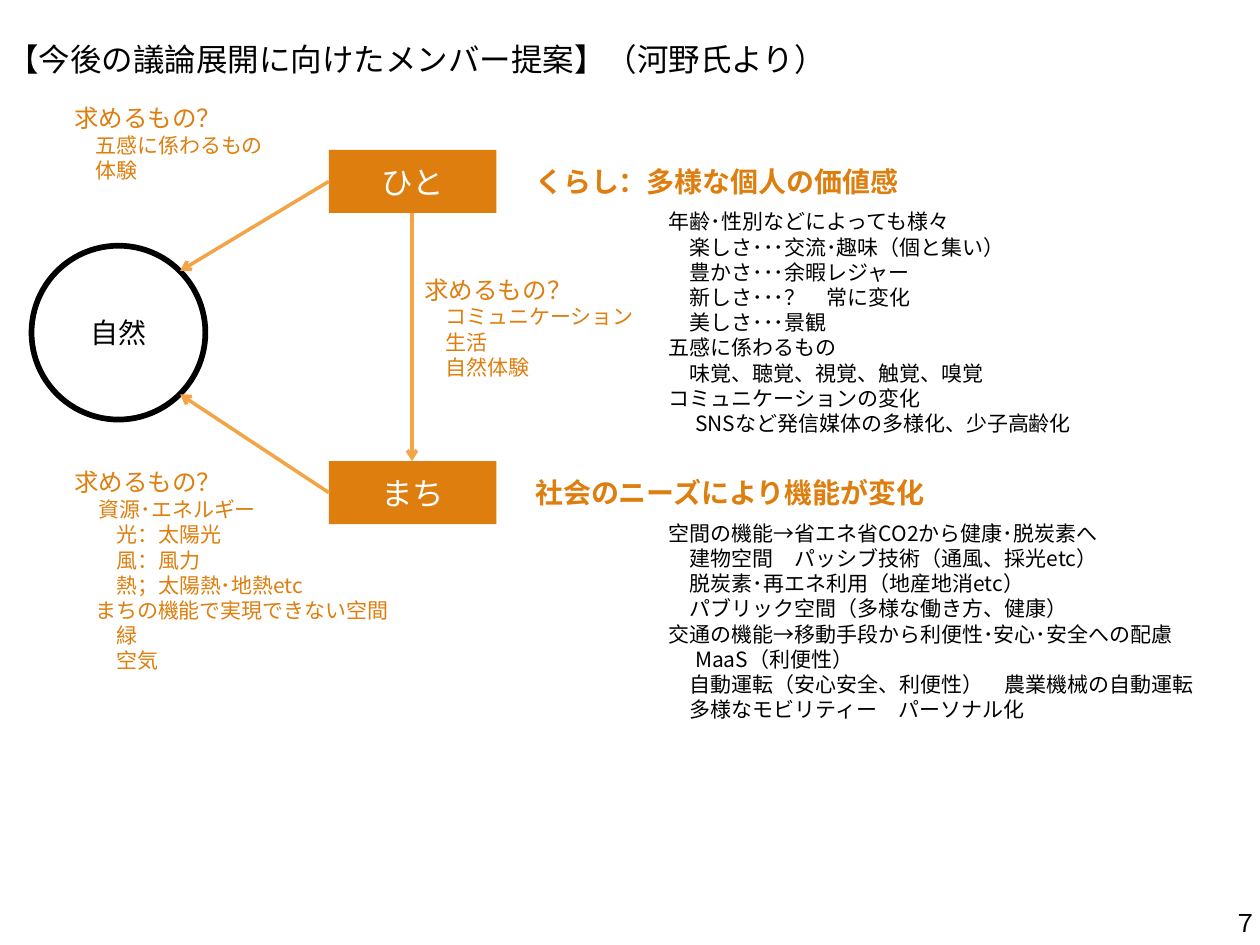
"""Build a slide on what people and towns seek from nature, on a grid of 100 columns by 75 rows."""
from lxml.etree import SubElement
from pptx import Presentation
from pptx.dml.color import RGBColor
from pptx.enum.shapes import MSO_CONNECTOR, MSO_SHAPE
from pptx.enum.text import MSO_ANCHOR, MSO_AUTO_SIZE, PP_ALIGN
from pptx.oxml.ns import qn
from pptx.util import Inches, Pt

THEME = {
    "font": "Noto Sans CJK JP",
    "black": RGBColor.from_string("000000"),
    "white": RGBColor.from_string("FFFFFF"),
    "orange": RGBColor.from_string("DD7E0E"),
    "arrow": RGBColor.from_string("F3A447"),
    "title": 18, "heading": 16, "question": 14, "body": 12,
}

presentation = Presentation()
presentation.slide_width, presentation.slide_height = Inches(10), Inches(7.5)
slide = presentation.slides.add_slide(presentation.slide_layouts[6])
COLUMN = presentation.slide_width / 100
ROW = presentation.slide_height / 75


def place(column, row, columns, rows):
    return [round(n) for n in (column * COLUMN, row * ROW, columns * COLUMN, rows * ROW)]


def write(shape, lines, color, align=PP_ALIGN.LEFT, anchor=MSO_ANCHOR.TOP, bold=False, wrap=True):
    frame = shape.text_frame
    frame.word_wrap, frame.vertical_anchor = wrap, anchor
    for index, (level, size, text) in enumerate(lines):
        paragraph = frame.add_paragraph() if index else frame.paragraphs[0]
        paragraph.text, paragraph.alignment = text, align
        font = paragraph.font
        font.size, font.bold, font.name = Pt(THEME[size]), bold, THEME["font"]
        font.color.rgb = THEME[color]
        properties = paragraph._p.get_or_add_pPr()
        properties.set("marL", str(Pt(level * THEME["body"])))
        properties.set("indent", "0")
        SubElement(properties.find(qn("a:defRPr")), qn("a:ea"), typeface=THEME["font"])


title = slide.shapes.add_textbox(*place(-0.4, 2.7, 67.7, 4))
write(title, [(0, "title", "【今後の議論展開に向けたメンバー提案】（河野氏より）")], "black", wrap=False)
title.text_frame.auto_size = MSO_AUTO_SIZE.SHAPE_TO_FIT_TEXT

nature = slide.shapes.add_shape(MSO_SHAPE.OVAL, *place(2.5, 19.5, 13.8, 13.8))
nature.shadow.inherit = False
nature.fill.background()
nature.line.color.rgb, nature.line.width = THEME["black"], Pt(3.25)
write(nature, [(0, "heading", "自然")], "black", PP_ALIGN.CENTER, MSO_ANCHOR.MIDDLE, wrap=False)

topics = [
    (11.9, "ひと", "くらし：多様な個人の価値感", [
        (0, "年齢･性別などによっても様々"),
        (1, "楽しさ･･･交流･趣味（個と集い）"),
        (1, "豊かさ･･･余暇レジャー"),
        (1, "新しさ･･･？　常に変化"),
        (1, "美しさ･･･景観"),
        (0, "五感に係わるもの"),
        (1, "味覚、聴覚、視覚、触覚、嗅覚"),
        (0, "コミュニケーションの変化"),
        (1.25, "SNSなど発信媒体の多様化、少子高齢化"),
    ]),
    (36.6, "まち", "社会のニーズにより機能が変化", [
        (0, "空間の機能→省エネ省CO2から健康･脱炭素へ"),
        (1, "建物空間　パッシブ技術（通風、採光etc）"),
        (1, "脱炭素･再エネ利用（地産地消etc）"),
        (1, "パブリック空間（多様な働き方、健康）"),
        (0, "交通の機能→移動手段から利便性･安心･安全への配慮"),
        (1.25, "MaaS（利便性）"),
        (1, "自動運転（安心安全、利便性）　農業機械の自動運転"),
        (1, "多様なモビリティー　パーソナル化"),
    ]),
]
for row, name, heading, details in topics:
    box = slide.shapes.add_shape(MSO_SHAPE.RECTANGLE, *place(26.1, row, 13.3, 5))
    box.shadow.inherit = False
    box.fill.solid()
    box.fill.fore_color.rgb = THEME["orange"]
    box.line.fill.background()
    write(box, [(0, "title", name)], "white", PP_ALIGN.CENTER, MSO_ANCHOR.MIDDLE)
    heading_box = slide.shapes.add_textbox(*place(41.5, row, 46.1, 5))
    write(heading_box, [(0, "heading", heading)], "orange", anchor=MSO_ANCHOR.MIDDLE, bold=True)
    detail_box = slide.shapes.add_textbox(*place(52.1, row + 4.2, 43.9, 2 * len(details) + 1))
    write(detail_box, [(level, "body", text) for level, text in details], "black")

questions = [
    ((4.9, 7.7, 22.8, 9.3), [(1, "五感に係わるもの"), (1, "体験")]),
    ((4.9, 36.6, 30.7, 17), [
        (1.17, "資源･エネルギー"),
        (2, "光：太陽光"),
        (2, "風：風力"),
        (2, "熱；太陽熱･地熱etc"),
        (1, "まちの機能で実現できない空間"),
        (2, "緑"),
        (2, "空気"),
    ]),
    ((32.7, 21.3, 19.4, 9.3), [(1, "コミュニケーション"), (1, "生活"), (1, "自然体験")]),
]
for area, answers in questions:
    question_box = slide.shapes.add_textbox(*place(*area))
    lines = [(0, "question", "求めるもの？")] + [(level, "body", text) for level, text in answers]
    write(question_box, lines, "orange")

for ends in [(14.3, 21.5, 26.1, 14.4), (14.3, 31.3, 26.1, 39.1), (32.7, 36.6, 32.7, 16.9)]:
    arrow = slide.shapes.add_connector(MSO_CONNECTOR.STRAIGHT, *place(*ends))
    arrow.line.color.rgb, arrow.line.width = THEME["arrow"], Pt(2)
    SubElement(arrow.line._get_or_add_ln(), qn("a:headEnd"), type="arrow")
    SubElement(arrow._element.spPr, qn("a:effectLst"))

page_number = slide.shapes.add_textbox(*place(96.9, 71.6, 3.1, 3.4))
write(page_number, [(0, "question", "７")], "black", PP_ALIGN.CENTER)
page_number.text_frame.auto_size = MSO_AUTO_SIZE.SHAPE_TO_FIT_TEXT

presentation.save("out.pptx")
